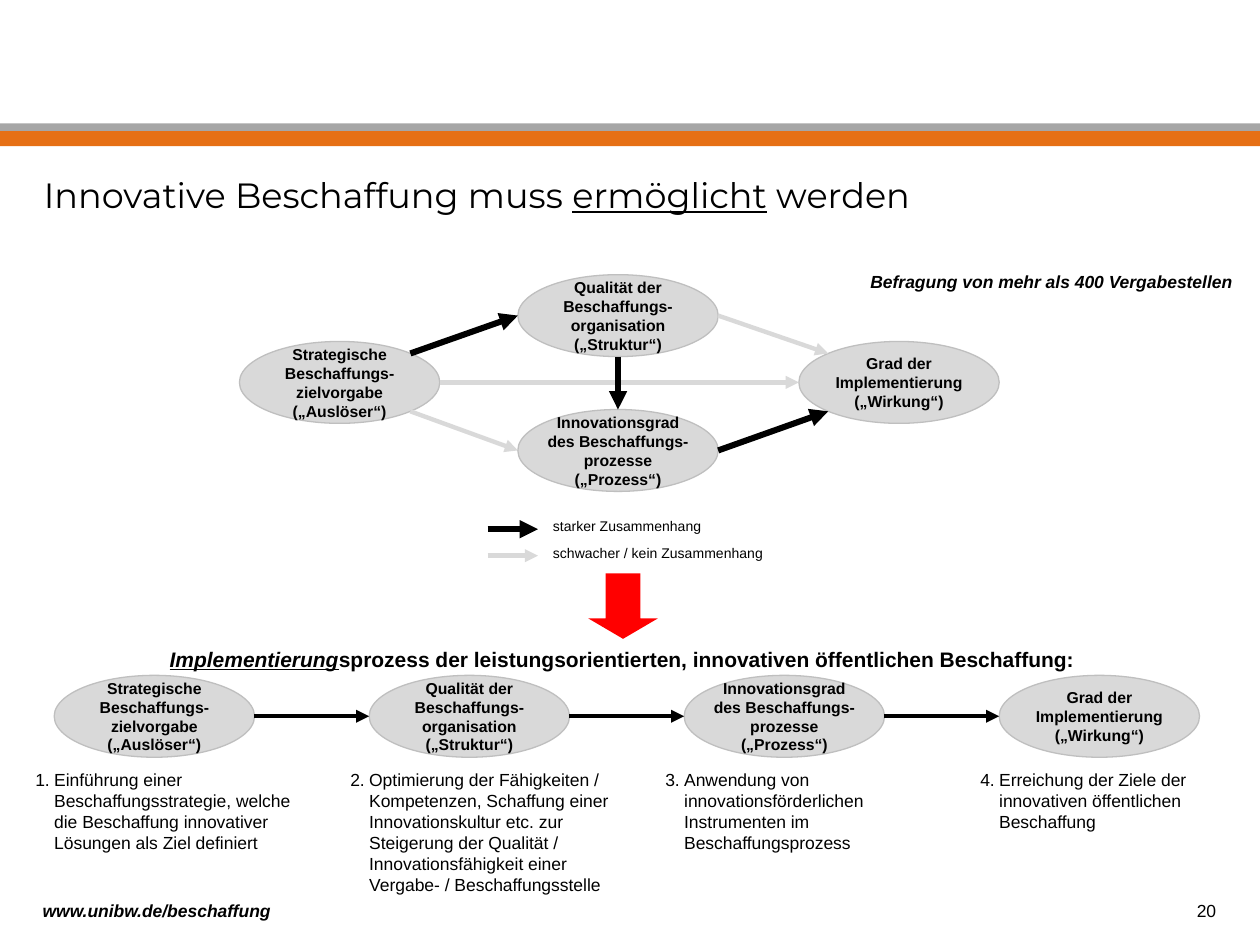
import math

from lxml import etree
from pptx import Presentation
from pptx import util as u
from pptx.dml.color import RGBColor
from pptx.enum import shapes, text
from pptx.oxml.ns import qn

BLACK, GREY, BORDER = "000000", "D9D9D9", "BFBFBF"
ORANGE, BAND_GREY, RED = "E67015", "A6A6A6", "FF0000"
STRONG, WEAK, FLOW = (BLACK, 3.5), (GREY, 2.5), (BLACK, 2.5)

# Content
TITLE = [("Innovative Beschaffung muss ", {}), ("ermöglicht", {"underline": True}),
         (" werden", {})]
HEADING = [("Implementierung", {"italic": True, "underline": True}),
           ("sprozess der leistungsorientierten, innovativen öffentlichen Beschaffung:", {})]
SURVEY = "Befragung von mehr als 400 Vergabestellen"
FACTORS = {
    "trigger": "Strategische\nBeschaffungs-\nzielvorgabe\n(„Auslöser“)",
    "structure": "Qualität der Beschaffungs-organisation\n(„Struktur“)",
    "process": "Innovationsgrad des Beschaffungs-prozesse\n(„Prozess“)",
    "effect": "Grad der Implementierung\n(„Wirkung“)",
}
MODEL_POSITIONS = {"trigger": (1.9, 2.71), "structure": (4.11, 2.18),
                   "process": (4.11, 3.25), "effect": (6.34, 2.71)}
# from, angle on its rim, to, angle on its rim, strength (degrees, clockwise from the right)
RELATIONS = [
    ("trigger", -45, "structure", 180, STRONG),
    ("trigger", 45, "process", 180, WEAK),
    ("structure", 0, "effect", 225, WEAK),
    ("process", 0, "effect", 135, STRONG),
    ("trigger", 0, "effect", 180, WEAK),
    ("structure", 90, "process", -90, STRONG),
]
LEGEND = [("starker Zusammenhang", STRONG, 4.2), ("schwacher / kein Zusammenhang", WEAK, 4.41)]
STEPS = [
    "Einführung einer Beschaffungsstrategie, welche\ndie Beschaffung innovativer "
    "Lösungen als Ziel definiert",
    "Optimierung der Fähigkeiten / Kompetenzen, Schaffung einer Innovationskultur etc. "
    "zur Steigerung der Qualität / Innovationsfähigkeit einer "
    "Vergabe- / Beschaffungsstelle",
    "Anwendung von innovationsförderlichen Instrumenten im Beschaffungsprozess",
    "Erreichung der Ziele der innovativen öffentlichen Beschaffung",
]

# Layout
OVAL_WIDTH, OVAL_HEIGHT = 1.59, 0.65
STEP_LEFT, STEP_PITCH, STEP_TOP = 0.43, 2.5, 5.36

presentation = Presentation()
presentation.slide_width, presentation.slide_height = u.Inches(10), u.Inches(7.5)
slide = presentation.slides.add_slide(presentation.slide_layouts[6])


def color(value):
    return RGBColor.from_string(value)


def write(frame, content, size=10, font="Arial", bold=False, italic=False,
          align=text.PP_ALIGN.LEFT, anchor=text.MSO_ANCHOR.TOP, wrap=True, inset=True):
    """Fill a text frame with a string or a list of (text, format) runs."""
    frame.word_wrap = wrap
    frame.vertical_anchor = anchor
    if not inset:
        frame.margin_left = frame.margin_right = frame.margin_top = frame.margin_bottom = 0
    paragraph = frame.paragraphs[0]
    paragraph.alignment = align
    runs = [(content, {})] if isinstance(content, str) else content
    for run_text, changes in runs:
        for number, line in enumerate(run_text.split("\n")):
            if number:
                paragraph.add_line_break()
            run = paragraph.add_run()
            run.text = line
            run.font.size, run.font.name = u.Pt(size), font
            run.font.bold = bold
            run.font.italic = changes.get("italic", italic)
            run.font.underline = changes.get("underline", False)
            run.font.color.rgb = color(BLACK)


def add_text(content, left, top, width, height, **formats):
    box = slide.shapes.add_textbox(*map(u.Inches, (left, top, width, height)))
    write(box.text_frame, content, **formats)


def add_shape(kind, left, top, width, height, fill, line=None):
    shape = slide.shapes.add_shape(kind, *map(u.Inches, (left, top, width, height)))
    shape.shadow.inherit = False
    shape.fill.solid()
    shape.fill.fore_color.rgb = color(fill)
    if line:
        shape.line.color.rgb = color(line)
        shape.line.width = u.Pt(0.75)
    else:
        shape.line.fill.background()
    return shape


def add_factor(name, left, top):
    oval = add_shape(shapes.MSO_SHAPE.OVAL, left, top, OVAL_WIDTH, OVAL_HEIGHT, GREY, BORDER)
    write(oval.text_frame, FACTORS[name], size=9, bold=True, inset=False,
          align=text.PP_ALIGN.CENTER, anchor=text.MSO_ANCHOR.MIDDLE)


def rim_point(left, top, degrees):
    angle = math.radians(degrees)
    return (left + OVAL_WIDTH / 2 * (1 + math.cos(angle)),
            top + OVAL_HEIGHT / 2 * (1 + math.sin(angle)))


def add_arrow(start, end, style):
    line_color, width = style
    arrow = slide.shapes.add_connector(shapes.MSO_CONNECTOR.STRAIGHT,
                                       *map(u.Inches, (*start, *end)))
    arrow.line.color.rgb = color(line_color)
    arrow.line.width = u.Pt(width)
    etree.SubElement(arrow.line._get_or_add_ln(), qn("a:tailEnd"), type="triangle")
    etree.SubElement(arrow._element.spPr, qn("a:effectLst"))


# Header bands and title
add_shape(shapes.MSO_SHAPE.RECTANGLE, 0, 1.04, 10, 0.12, ORANGE)
add_shape(shapes.MSO_SHAPE.RECTANGLE, 0, 0.98, 10, 0.06, BAND_GREY)
add_text(TITLE, 0.25, 1.33, 9.5, 0.83, size=20, font="Montserrat")
add_text(SURVEY, 6.81, 2.1, 3.1, 0.25, bold=True, italic=True, wrap=False)

# Relations between the factors
for name, position in MODEL_POSITIONS.items():
    add_factor(name, *position)
for source, source_angle, target, target_angle, style in RELATIONS:
    add_arrow(rim_point(*MODEL_POSITIONS[source], source_angle),
              rim_point(*MODEL_POSITIONS[target], target_angle), style)

# Legend
for label, style, middle in LEGEND:
    add_arrow((3.87, middle), (4.27, middle), style)
    add_text(label, 4.29, middle - 0.14, 1.97, 0.25, size=8)

# Implementation process
down_arrow = add_shape(shapes.MSO_SHAPE.DOWN_ARROW, 4.67, 4.55, 0.55, 0.52, RED)
down_arrow.adjustments[0], down_arrow.adjustments[1] = 0.5, 0.31
add_text(HEADING, 1.21, 5.08, 7.46, 0.3, size=12, bold=True, wrap=False,
         align=text.PP_ALIGN.CENTER)
for index, (name, step) in enumerate(zip(FACTORS, STEPS)):
    left = STEP_LEFT + index * STEP_PITCH
    add_factor(name, left, STEP_TOP)
    if index:
        add_arrow(rim_point(left - STEP_PITCH, STEP_TOP, 0),
                  rim_point(left, STEP_TOP, 180), FLOW)
    add_text(f"{index + 1}.", left - 0.15, 6.1, 0.15, 0.17, inset=False, wrap=False)
    add_text(step, left, 6.1, 2.05, 0.84, inset=False)

# Footer
add_text("www.unibw.de/beschaffung", 0.24, 7.09, 2.95, 0.25, bold=True, italic=True)
add_text("20", 3.66, 7.09, 6.09, 0.25, align=text.PP_ALIGN.RIGHT)

presentation.save("out.pptx")
